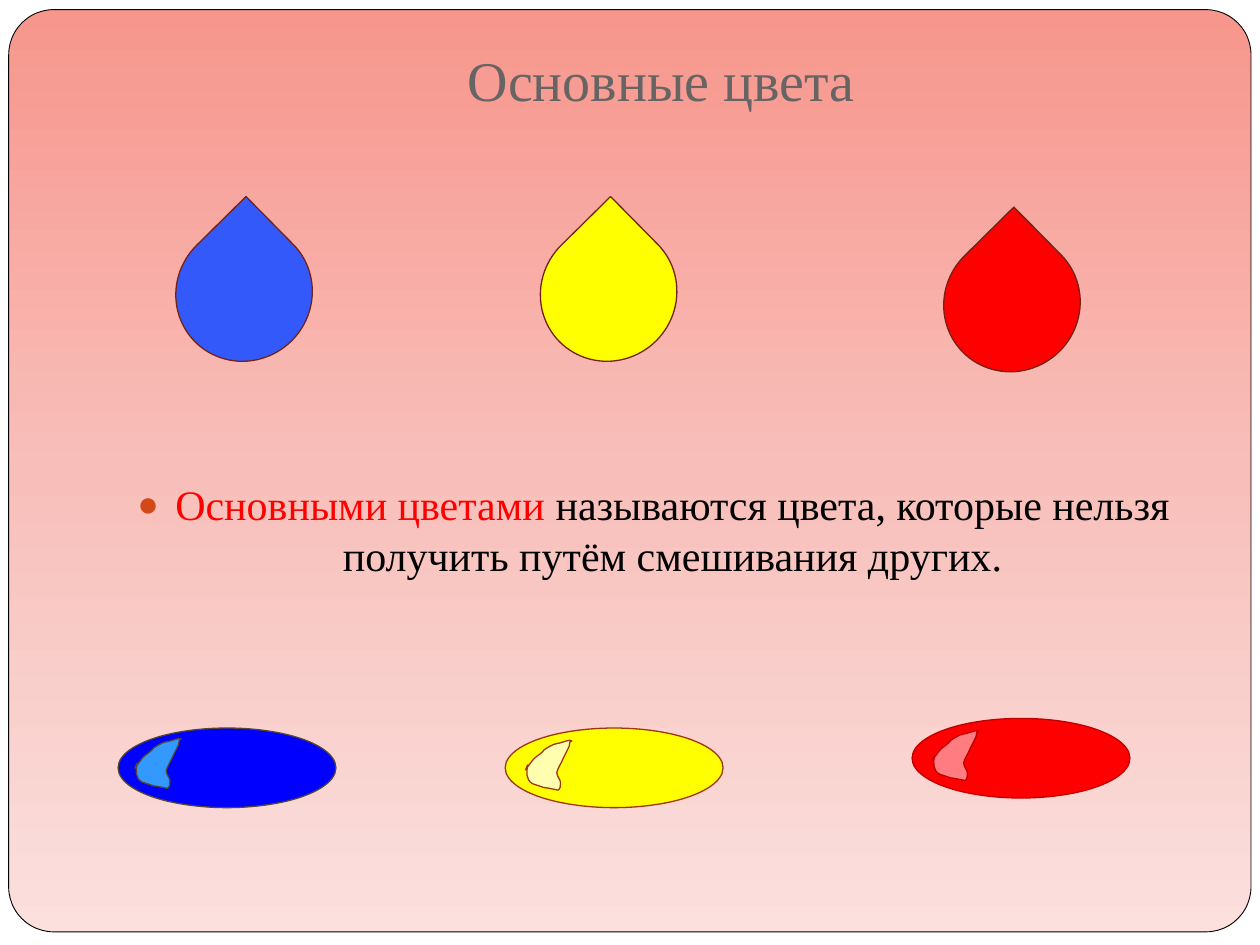
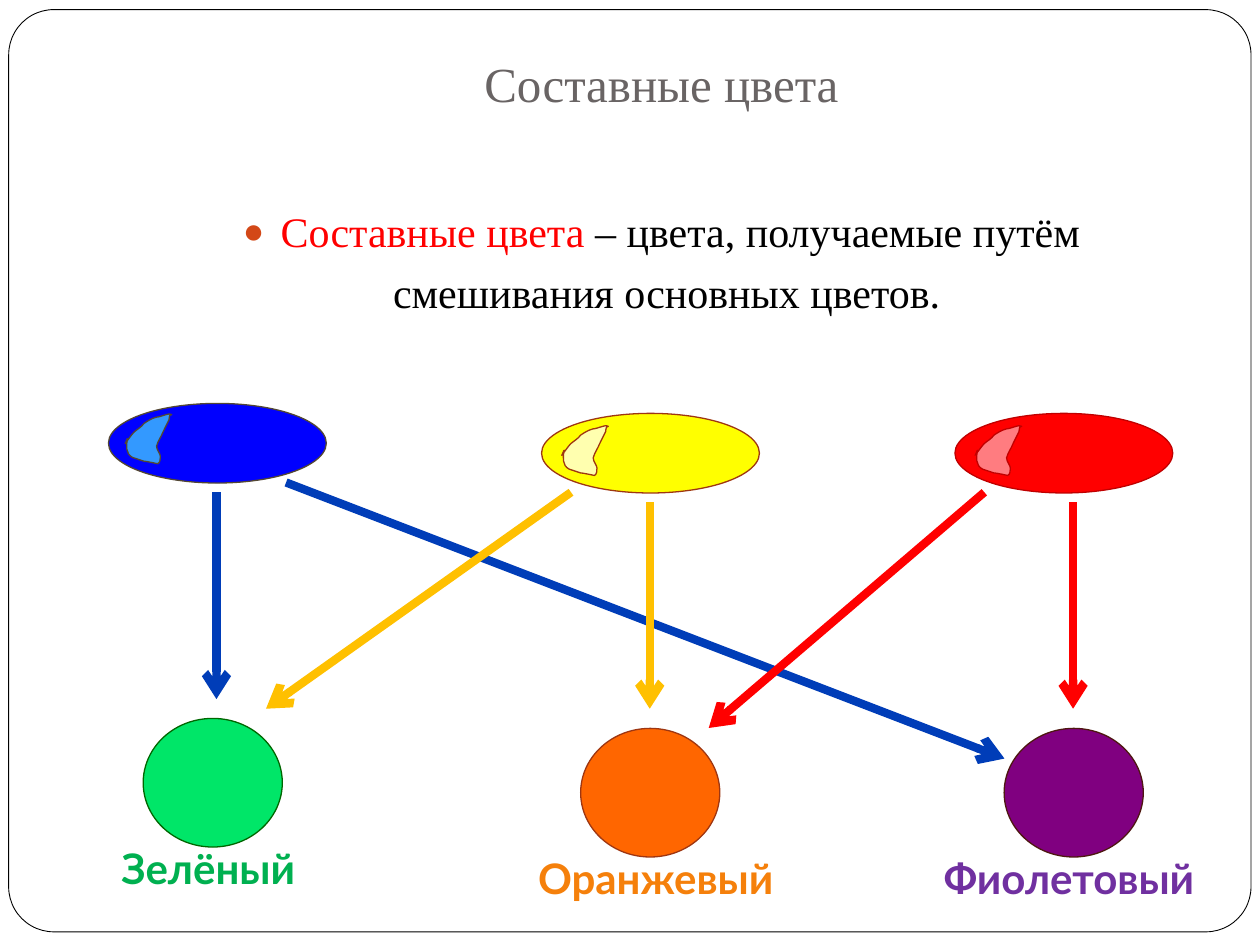
from copy import deepcopy
from dataclasses import dataclass
from itertools import chain

from lxml.etree import SubElement
from pptx import Presentation
from pptx.dml.color import RGBColor
from pptx.enum.shapes import MSO_CONNECTOR, MSO_SHAPE
from pptx.enum.text import MSO_ANCHOR, MSO_AUTO_SIZE, PP_ALIGN
from pptx.oxml.ns import qn
from pptx.util import Pt

SERIF, SANS = "Times New Roman", "Lato"
WHITE, BLACK, GREY, RED, YELLOW = "FFFFFF", "000000", "696464", "FF0000", "FFFF00"
BULLET, DROP_EDGE = "D34817", "742217"
BLUE_ARROW, YELLOW_ARROW = "003DB8", "FFC000"
SUNSET = ["F7968C", "F8BFBA", "FBE0DE"]

# Outline of the highlight, in units of 0.72 points: a start, then Bezier curves
GLEAM_UNIT = Pt(0.72)
GLEAM_START = (25, 4)
GLEAM_CURVES = [
    ((21, 5), (18, 7), (15, 9)), ((13, 12), (9, 14), (7, 16)),
    ((5, 18), (1, 24), (0, 25)), ((0, 26), (2, 20), (2, 21)),
    ((1, 26), (0, 33), (6, 36)), ((9, 37), (12, 38), (15, 39)),
    ((17, 39), (26, 41), (26, 41)), ((28, 40), (28, 37), (28, 35)),
    ((28, 33), (25, 30), (25, 27)), ((26, 23), (29, 19), (30, 16)),
    ((32, 12), (33, 10), (34, 8)), ((36, 6), (34, 2), (37, 2)),
    ((36, 0), (28, 4), (25, 4)),
]


@dataclass
class Paint:
    fill: str
    edge: str
    gleam: str
    offset: tuple = (11.5, 6)
    opacity: int = 100


BLUE_PAINT = Paint("0000FF", "534733", "3399FF", offset=(9.5, 5))
YELLOW_PAINT = Paint(YELLOW, "9E3611", "FFFFCC", opacity=86)
RED_PAINT = Paint(RED, "C00000", "FF7C80")


def color(hex_code):
    return RGBColor.from_string(hex_code)


def points(*lengths):
    return [Pt(length) for length in lengths]


def bend(shape):
    """Turn each three line segments of a freeform into one Bezier curve."""
    segments = list(shape.element.iter(qn("a:lnTo")))
    for first in range(0, len(segments), 3):
        curve, *rest = segments[first:first + 3]
        cubic = curve.getparent().makeelement(qn("a:cubicBezTo"))
        curve.addprevious(cubic)
        for segment in (curve, *rest):
            cubic.append(segment[0])
            segment.getparent().remove(segment)


class Painter:
    def __init__(self, deck):
        self.deck = deck
        self.page = None

    def new_page(self, title, title_size, frame_colors):
        self.page = self.deck.slides.add_slide(self.deck.slide_layouts[1])
        self.frame(frame_colors)
        box = self.page.shapes.title
        self.place(box, 72, 21.5, 612, 50)
        frame = box.text_frame
        frame.vertical_anchor = MSO_ANCHOR.BOTTOM
        frame.margin_bottom = Pt(7.2)
        frame.text = title
        para = frame.paragraphs[0]
        para.alignment = PP_ALIGN.CENTER
        self.style(para.runs[0], title_size, GREY)

    def place(self, box, *bounds):
        box.left, box.top, box.width, box.height = points(*bounds)
        box.text_frame.word_wrap = True
        box.text_frame.auto_size = MSO_AUTO_SIZE.NONE

    def style(self, span, size, text_color, font=SERIF, bold=False):
        span.font.size, span.font.name, span.font.bold = Pt(size), font, bold
        span.font.color.rgb = color(text_color)

    def finish(self, shape, fill, edge, width=0.75):
        shape.shadow.inherit = False
        shape.fill.solid()
        shape.fill.fore_color.rgb = color(fill)
        shape.line.color.rgb = color(edge)
        shape.line.width = Pt(width)

    def shape(self, kind, bounds, fill, edge, width=0.75):
        shape = self.page.shapes.add_shape(kind, *points(*bounds))
        self.finish(shape, fill, edge, width)
        return shape

    def frame(self, colors):
        """Put the rounded frame behind the placeholders."""
        frame = self.shape(MSO_SHAPE.ROUNDED_RECTANGLE, (5, 5.5, 709.9, 527),
                           colors[0], BLACK, 0.5)
        frame.adjustments[0] = 0.049
        self.page.shapes.element.insert(2, frame.element)
        if len(colors) == 1:
            return
        frame.fill.gradient()
        frame.fill.gradient_angle = 270
        stop_list = frame.element.find(".//" + qn("a:gsLst"))
        stop_list.insert(1, deepcopy(stop_list[0]))
        for index, (stop, hex_code) in enumerate(zip(frame.fill.gradient_stops, colors)):
            stop.position = index / (len(colors) - 1)
            stop.color.rgb = color(hex_code)

    def definition(self, bounds, term, meaning, continuation=None):
        """Fill the body with a red term, its meaning and an unbulleted second line."""
        box = self.page.placeholders[1]
        self.place(box, *bounds)
        first = box.text_frame.paragraphs[0]
        self.bullet(first)
        lines = [(first, [(term, RED), (meaning, BLACK)], 0)]
        if continuation:
            second = box.text_frame.add_paragraph()
            properties = second._p.get_or_add_pPr()
            properties.set("marL", str(Pt(6)))
            properties.set("indent", "0")
            SubElement(properties, qn("a:buNone"))
            lines.append((second, [(continuation, BLACK)], 5.8))
        for para, spans, space in lines:
            para.alignment = PP_ALIGN.CENTER
            para.space_before = Pt(space)
            for text, text_color in spans:
                span = para.add_run()
                span.text = text
                self.style(span, 24, text_color)

    def bullet(self, para):
        properties = para._p.get_or_add_pPr()
        properties.set("marL", str(Pt(21.6)))
        properties.set("indent", str(-Pt(21.6)))
        bullet_color = SubElement(properties, qn("a:buClr"))
        SubElement(bullet_color, qn("a:srgbClr"), val=BULLET)
        SubElement(properties, qn("a:buSzPct"), val="85000")
        SubElement(properties, qn("a:buChar"), char="●")

    def drop(self, left, top, fill):
        shape = self.shape(MSO_SHAPE.TEAR, (left, top, 79, 77), fill, DROP_EDGE)
        shape.rotation = 315.4

    def puddle(self, left, top, paint):
        """Draw a flat ellipse of paint with its highlight."""
        self.shape(MSO_SHAPE.OVAL, (left, top, 124.5, 45.5), paint.fill, paint.edge)
        builder = self.page.shapes.build_freeform(*GLEAM_START, scale=GLEAM_UNIT)
        builder.add_line_segments(chain.from_iterable(GLEAM_CURVES), close=True)
        across, down = paint.offset
        gleam = builder.convert_to_shape(*points(left + across, top + down))
        bend(gleam)
        self.finish(gleam, paint.gleam, paint.edge)
        if paint.opacity < 100:
            tint = gleam.element.spPr.find(qn("a:solidFill"))[0]
            SubElement(tint, qn("a:alpha"), val=str(paint.opacity * 1000))

    def arrow(self, start, end, line_color):
        arrow = self.page.shapes.add_connector(MSO_CONNECTOR.STRAIGHT, *points(*start, *end))
        arrow.line.color.rgb = color(line_color)
        arrow.line.width = Pt(4.75)
        line = arrow.element.spPr.find(qn("a:ln"))
        SubElement(line, qn("a:tailEnd"), type="arrow")
        SubElement(arrow.element.spPr, qn("a:effectLst"))

    def mixture(self, left, top, fill, edge, label, label_left, label_color):
        """Draw a circle of mixed colour with its name below."""
        self.shape(MSO_SHAPE.OVAL, (left, top, 79.5, 73.5), fill, edge)
        bounds = (label_left, top + 67.5, 164, 36)
        box = self.page.shapes.add_textbox(*points(*bounds))
        self.place(box, *bounds)
        box.text_frame.text = label
        para = box.text_frame.paragraphs[0]
        para.alignment = PP_ALIGN.CENTER
        self.style(para.runs[0], 24, label_color, SANS, bold=True)


def primary_colors(painter):
    painter.new_page("Основные цвета", 32, SUNSET)
    painter.definition((67.5, 270, 612, 117), "Основными цветами ",
                       "называются цвета, которые нельзя получить путём смешивания других.")
    for left, top, fill in [(100, 129, "3359FB"), (308.3, 129, YELLOW), (538.8, 135, RED)]:
        painter.drop(left, top, fill)
    for left, top, paint in [(67.5, 416, BLUE_PAINT), (288.7, 416, YELLOW_PAINT),
                             (521.2, 410.5, RED_PAINT)]:
        painter.puddle(left, top, paint)


def mixed_colors(painter):
    painter.new_page("Составные цвета", 28, [WHITE])
    painter.definition((72, 114, 612, 99), "Составные цвета ",
                       "– цвета, получаемые путём", "смешивания основных цветов.")
    for left, top, paint in [(62, 230.5, BLUE_PAINT), (309.5, 236.2, YELLOW_PAINT),
                             (545.7, 236.2, RED_PAINT)]:
        painter.puddle(left, top, paint)
    for start, end, line_color in [
        ((613.2, 287), (613.2, 405), RED),
        ((163.5, 275.7), (574, 433.5), BLUE_ARROW),
        ((123.7, 281.3), (123.7, 399.5), BLUE_ARROW),
        ((326.3, 281.3), (152, 405), YELLOW_ARROW),
        ((371.3, 287), (371.3, 405), YELLOW_ARROW),
        ((562.5, 281.3), (405, 416), RED),
    ]:
        painter.arrow(start, end, line_color)
    painter.mixture(81.8, 410.5, "00E668", "006600", "Зелёный", 37, "00B050")
    painter.mixture(331.8, 416.2, "FF6600", "9E3611", "Оранжевый", 292.7, "F5800B")
    painter.mixture(573.8, 416.2, "800080", "4E1710", "Фиолетовый", 528.8, "7030A0")


def main():
    deck = Presentation()
    deck.slide_width, deck.slide_height = points(720, 540)
    background = deck.slide_master.background.fill
    background.solid()
    background.fore_color.rgb = color(WHITE)
    painter = Painter(deck)
    primary_colors(painter)
    mixed_colors(painter)
    deck.save("out.pptx")


if __name__ == "__main__":
    main()
